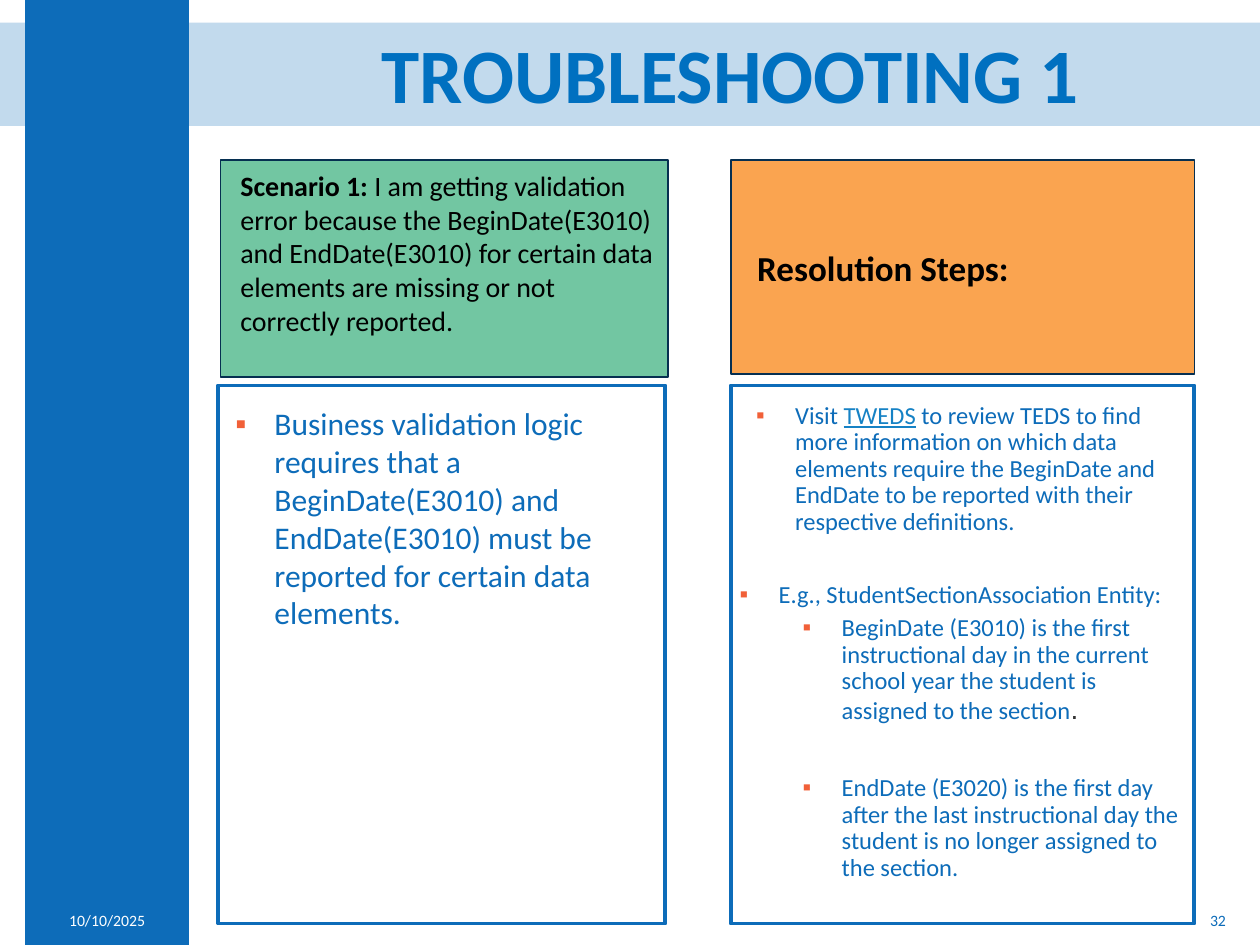
import pptx
import pptx.dml.color
import pptx.enum.shapes
import pptx.enum.text
import pptx.oxml
import pptx.oxml.ns
import pptx.util
from dataclasses import dataclass

Inches = pptx.util.Inches
Pt = pptx.util.Pt
Align = pptx.enum.text.PP_ALIGN
Anchor = pptx.enum.text.MSO_ANCHOR


@dataclass(frozen=True)
class Theme:
    """Colours, fonts and type sizes of the slide."""
    blue: str = "0D6CB9"
    title: str = "0070C0"
    link: str = "1682C5"
    navy: str = "062F51"
    green: str = "72C6A2"
    orange: str = "FAA450"
    bullet: str = "F16038"
    black: str = "000000"
    grey: str = "333333"
    white: str = "FFFFFF"
    face: str = "Calibri"
    dot: str = "Arial"
    huge: int = 44
    head: int = 20
    large: int = 18
    mid: int = 16
    body: int = 14
    small: int = 9


T = Theme()


def rgb(code):
    """Turn a hex code into a colour."""
    return pptx.dml.color.RGBColor.from_string(code)


def element(xml):
    """Parse one drawing element."""
    return pptx.oxml.parse_xml(xml.replace(" ", f' {pptx.oxml.ns.nsdecls("a")} ', 1))


def style(font, size, color, bold=False, face=T.face):
    """Set the look of a paragraph or run font."""
    font.name, font.size, font.bold = face, Pt(size), bold
    font.color.rgb = rgb(color)


def panel(slide, box, fill=None, line=None, width=1, alpha=None):
    """Draw a rectangle in the given box."""
    kind = pptx.enum.shapes.MSO_SHAPE.RECTANGLE
    shape = slide.shapes.add_shape(kind, *map(Inches, box))
    shape.shadow.inherit = False
    if fill:
        shape.fill.solid()
        shape.fill.fore_color.rgb = rgb(fill)
    else:
        shape.fill.background()
    if alpha:
        tone = shape.fill._xPr.find(".//" + pptx.oxml.ns.qn("a:srgbClr"))
        tone.append(element(f'<a:alpha val="{alpha * 1000}"/>'))
    if line:
        shape.line.color.rgb = rgb(line)
        shape.line.width = Pt(width)
    else:
        shape.line.fill.background()
    return shape


def textbox(slide, box, anchor=Anchor.TOP, inset=(0.1, 0.05)):
    """Add a wrapping text box and return its frame."""
    frame = slide.shapes.add_textbox(*map(Inches, box)).text_frame
    frame.word_wrap = True
    frame.vertical_anchor = anchor
    frame.margin_left = frame.margin_right = Inches(inset[0])
    frame.margin_top = frame.margin_bottom = Inches(inset[1])
    return frame


def label(slide, box, text, size, color, align, bold=False):
    """Place one line of text, centred in height."""
    para = textbox(slide, box, Anchor.MIDDLE, (0.07, 0.04)).paragraphs[0]
    para.text, para.alignment = text, align
    style(para.font, size, color, bold)


def bullet(para, text, size, left=0.31):
    """Fill a paragraph with a square-bulleted text."""
    props = para._p.get_or_add_pPr()
    props.set("marL", str(Inches(left)))
    props.set("indent", str(Inches(-0.31)))
    props.append(element(f'<a:buClr ><a:srgbClr val="{T.bullet}"/></a:buClr>'))
    props.append(element('<a:buFont typeface="Arial"/>'))
    props.append(element('<a:buChar char="▪"/>'))
    para.add_run().text = text
    style(para.font, size, T.blue)


def frame(slide):
    """Draw the band, side bar, title, date and page number."""
    panel(slide, (0, 0.18, 10, 0.82), T.blue, alpha=25)
    panel(slide, (0.2, 0, 1.3, 7.5), T.blue)
    label(slide, (1.9, 0.17, 7.8, 0.82), "TROUBLESHOOTING 1", T.huge, T.title,
          Align.CENTER, True)
    label(slide, (0.2, 7.1, 1.3, 0.4), "10/10/2025", T.small, T.white, Align.CENTER)
    label(slide, (7.55, 7.1, 2.25, 0.4), "32", T.small, T.blue, Align.RIGHT)


def scenario(slide, left, top, width):
    """Build the scenario column."""
    panel(slide, (left + 0.02, top, width, 1.72), T.green, T.navy)
    para = textbox(slide, (left + 0.08, top + 0.02, 3.5, 1.72)).paragraphs[0]
    lead = para.add_run()
    lead.text = "Scenario 1: "
    lead.font.bold = True
    para.add_run().text = (
        "I am getting validation error because the BeginDate(E3010) and "
        "EndDate(E3010) for certain data elements are missing or not "
        "correctly reported.")
    style(para.font, T.mid, T.black)
    panel(slide, (left, top + 1.79, width, 4.27), line=T.blue, width=2.25)
    para = textbox(slide, (left + 0.04, top + 1.89, 3.48, 2.19)).paragraphs[0]
    bullet(para, "Business validation logic requires that a BeginDate(E3010) and "
           "EndDate(E3010) must be reported for certain data elements.", T.large)


def steps(slide, left, top, width):
    """Build the resolution column."""
    head = panel(slide, (left, top, width, 1.7), T.orange, T.navy).text_frame
    head.vertical_anchor = Anchor.MIDDLE
    head.margin_left = Inches(0.21)
    para = head.paragraphs[0]
    para.text, para.alignment = "Resolution Steps:", Align.LEFT
    style(para.font, T.head, T.black, True)

    items = (
        ("Visit ", 0.44, 0),
        ("E.g., StudentSectionAssociation Entity:", 0.31, 26.7),
        ("BeginDate (E3010)\u00a0is the first instructional day in the current "
         "school year the student is assigned to the section", 0.81, 3.8),
        ("EndDate (E3020)\u00a0is the first day after the last instructional day "
         "the student is no longer assigned to the section.", 0.81, 28.8))
    body = textbox(slide, (left, top + 1.89, width, 4.08), inset=(0.07, 0.04))
    paras = [body.paragraphs[0]] + [body.add_paragraph() for _ in items[1:]]
    for para, (text, indent, gap) in zip(paras, items):
        bullet(para, text, T.body, indent)
        para.line_spacing, para.space_before = 0.9, Pt(gap)
    link = paras[0].add_run()
    link.text = "TWEDS"
    link.font.underline = True
    link.font.color.rgb = rgb(T.link)
    paras[0].add_run().text = (
        " to review TEDS to find more information on which data elements require "
        "the BeginDate and EndDate to be reported with their respective definitions.")
    stop = paras[2].add_run()
    stop.text = "."
    style(stop.font, T.mid, T.grey, face=T.dot)
    panel(slide, (left, top + 1.79, width, 4.27), line=T.blue, width=2.25)


def main():
    """Build and save the slide."""
    deck = pptx.Presentation()
    deck.slide_width, deck.slide_height = Inches(10), Inches(7.5)
    slide = deck.slides.add_slide(deck.slide_layouts[6])
    frame(slide)
    scenario(slide, 1.73, 1.27, 3.55)
    steps(slide, 5.8, 1.27, 3.68)
    deck.save("out.pptx")


if __name__ == "__main__":
    main()
